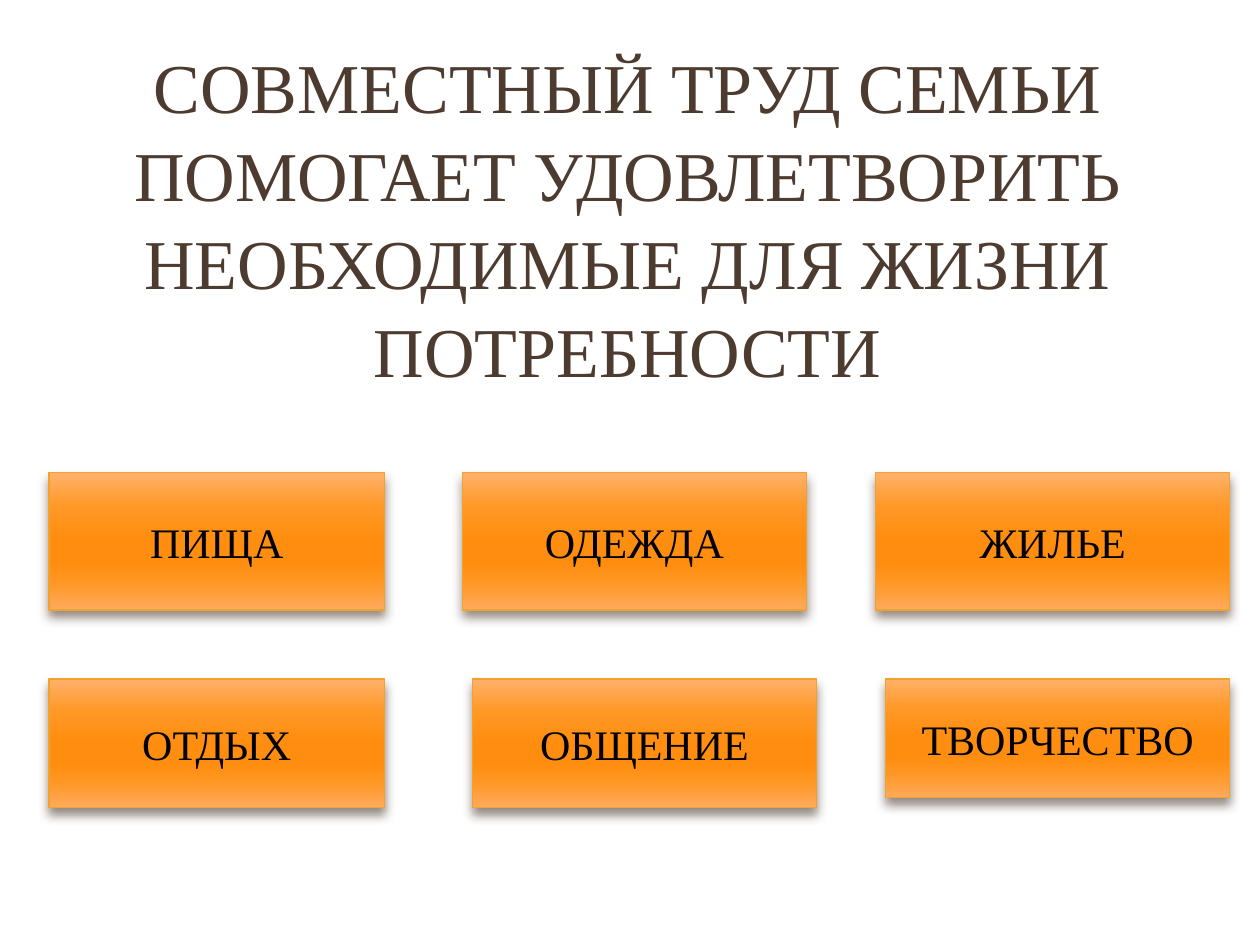
from lxml import etree
from pptx import Presentation
from pptx.dml.color import RGBColor
from pptx.enum import shapes, text
from pptx.oxml import ns
from pptx.util import Inches, Pt

BROWN = RGBColor(0x4E, 0x3B, 0x30)
BLACK = RGBColor(0, 0, 0)
GOLD = RGBColor(0xF0, 0xA2, 0x2E)
STOPS = [
    (0, RGBColor(0xFF, 0xB1, 0x6A)),
    (25, RGBColor(0xFF, 0x98, 0x26)),
    (50, RGBColor(0xFF, 0x8D, 0x0F)),
    (65, RGBColor(0xFF, 0x8D, 0x0F)),
    (80, RGBColor(0xFF, 0x97, 0x24)),
    (100, RGBColor(0xFF, 0xAA, 0x5C)),
]
FONT = "Times New Roman"
NEEDS = [
    ("ПИЩА", 0.39, 3.75, 2.66, 1.09),
    ("ОДЕЖДА", 3.67, 3.75, 2.73, 1.09),
    ("ЖИЛЬЕ", 6.95, 3.75, 2.81, 1.09),
    ("ОТДЫХ", 0.39, 5.39, 2.66, 1.02),
    ("ОБЩЕНИЕ", 3.75, 5.39, 2.73, 1.02),
    ("ТВОРЧЕСТВО", 7.03, 5.39, 2.73, 0.94),
]


def node(root, tag, **attrs):
    """Append a drawing element with the given attributes."""
    values = {key: str(val) for key, val in attrs.items()}
    return etree.SubElement(root, ns.qn(tag), values)


def write(shape, words, size, color):
    """Put one centred run into a shape."""
    frame = shape.text_frame
    frame.word_wrap = True
    frame.vertical_anchor = text.MSO_ANCHOR.MIDDLE
    para = frame.paragraphs[0]
    para.alignment = text.PP_ALIGN.CENTER
    run = para.add_run()
    run.text = words
    run.font.name = FONT
    run.font.size = Pt(size)
    run.font.color.rgb = color
    return para


def shade(shape):
    """Fill a shape with the vertical orange gradient."""
    shape.fill.gradient()
    shape.fill.gradient_angle = 270
    stops = shape._element.spPr.find(ns.qn("a:gradFill")).find(ns.qn("a:gsLst"))
    for old in list(stops):
        stops.remove(old)
    for pos, color in STOPS:
        stop = node(stops, "a:gs", pos=pos * 1000)
        node(stop, "a:srgbClr", val=color)


def lift(shape):
    """Give a shape a soft brown shadow below it."""
    shape.shadow.inherit = False
    effects = shape._element.spPr.find(ns.qn("a:effectLst"))
    shadow = node(effects, "a:outerShdw", blurRad=Pt(6), dist=Pt(4),
                  dir=90 * 60000, rotWithShape=0)
    color = node(shadow, "a:srgbClr", val=BROWN)
    node(color, "a:alpha", val=60000)


def add_need(slide, words, *box):
    """Add one labelled orange box."""
    shape = slide.shapes.add_shape(
        shapes.MSO_SHAPE.RECTANGLE, *map(Inches, box))
    shade(shape)
    shape.line.color.rgb = GOLD
    shape.line.width = Pt(0.79)
    lift(shape)
    write(shape, words, 24, BLACK)


def add_title(slide, words):
    """Place and format the slide title."""
    title = slide.shapes.title
    title.left, title.top = Inches(0.23), Inches(1.25)
    title.width, title.height = Inches(9.5), Inches(0.92)
    write(title, words, 40, BROWN).line_spacing = 1.05
    title.text_frame.auto_size = text.MSO_AUTO_SIZE.NONE


def main():
    """Build and save the slide."""
    deck = Presentation()
    deck.slide_width, deck.slide_height = Inches(10), Inches(7.5)
    slide = deck.slides.add_slide(deck.slide_layouts[5])
    add_title(slide, "СОВМЕСТНЫЙ ТРУД СЕМЬИ ПОМОГАЕТ УДОВЛЕТВОРИТЬ "
                     "НЕОБХОДИМЫЕ ДЛЯ ЖИЗНИ ПОТРЕБНОСТИ")
    for need in NEEDS:
        add_need(slide, *need)
    deck.save("out.pptx")


if __name__ == "__main__":
    main()
